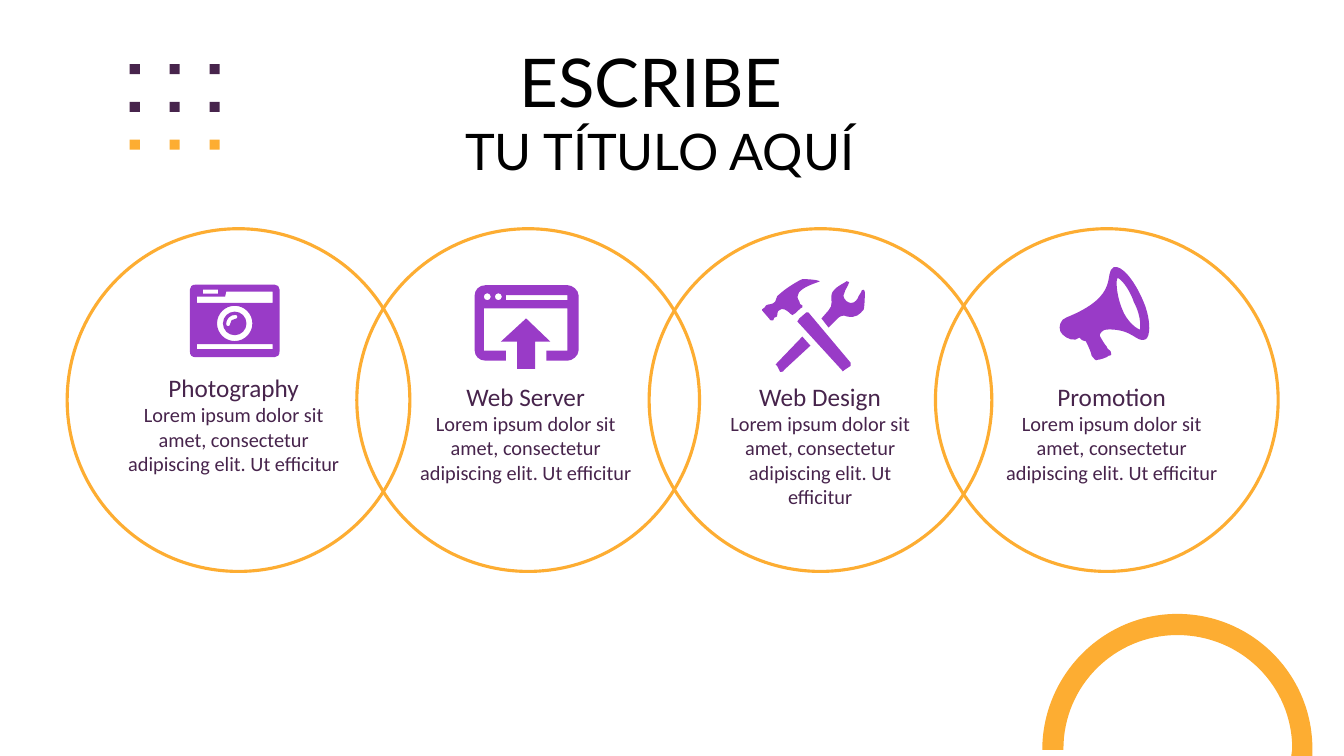
from itertools import chain

from lxml.etree import SubElement
from pptx import Presentation
from pptx.dml.color import RGBColor
from pptx.enum.shapes import MSO_SHAPE as Shape
from pptx.enum.text import MSO_AUTO_SIZE as AutoSize, PP_ALIGN as Align
from pptx.oxml import parse_xml
from pptx.oxml.ns import nsdecls, qn
from pptx.util import Pt

ORANGE, PLUM, PURPLE, BLACK = "FDAD32", "47244C", "993BC7", "000000"
GRID_UNIT = 0.72
CIRCLE_SIZE = 244.8
CIRCLE_TOP = 163.4
BODY = "Lorem ipsum dolor sit amet, consectetur adipiscing elit. Ut efficitur"


def color(hex_code):
    return RGBColor.from_string(hex_code)


def paint(shape, fill=None, line=None, line_width=2.25):
    shape.shadow.inherit = False
    if fill:
        shape.fill.solid()
        shape.fill.fore_color.rgb = color(fill)
    else:
        shape.fill.background()
    if line:
        shape.line.color.rgb = color(line)
        shape.line.width = Pt(line_width)
    else:
        shape.line.fill.background()


def circle(x, y, radius):
    k = radius * 0.55
    east, south, west, north = x + radius, y + radius, x - radius, y - radius
    return [(east, y), (east, y + k, x + k, south, x, south),
            (x - k, south, west, y + k, west, y),
            (west, y - k, x - k, north, x, north),
            (x + k, north, east, y - k, east, y)]


def rectangle(left, top, right, bottom):
    return [(left, top), (right, top), (right, bottom), (left, bottom)]


def add_outline(page, left, top, contours, fill):
    def place(x, y):
        return Pt(left + x * GRID_UNIT), Pt(top + y * GRID_UNIT)

    builder = None
    for contour in contours:
        points = [place(*segment[-2:]) for segment in contour]
        if builder is None:
            builder = page.shapes.build_freeform(*points[0])
        else:
            builder.move_to(*points[0])
        builder.add_line_segments(points[1:], close=True)
    shape = builder.convert_to_shape()
    paint(shape, fill)
    segments = chain.from_iterable(contour[1:] for contour in contours)
    straights = list(shape.element.iter(qn("a:lnTo")))
    for straight, segment in zip(straights, segments):
        if len(segment) == 2:
            continue
        curve = parse_xml(f"<a:cubicBezTo {nsdecls('a')}/>")
        for index in (0, 2, 4):
            x, y = place(*segment[index:index + 2])
            SubElement(curve, qn("a:pt"), x=str(x - shape.left), y=str(y - shape.top))
        straight.getparent().replace(straight, curve)


def add_text(page, box, lines, font, hex_code, insets=None):
    frame = page.shapes.add_textbox(*map(Pt, box)).text_frame
    frame.word_wrap = True
    frame.auto_size = AutoSize.SHAPE_TO_FIT_TEXT
    if insets:
        frame.margin_left = frame.margin_right = Pt(insets[0])
        frame.margin_top = frame.margin_bottom = Pt(insets[1])
    for index, (text, size) in enumerate(lines):
        para = frame.add_paragraph() if index else frame.paragraphs[0]
        para.alignment = Align.CENTER
        span = para.add_run()
        span.text = text
        span.font.name = font
        span.font.size = Pt(size)
        span.font.color.rgb = color(hex_code)


CAMERA = [
    [(84, 0), (87, 0, 89, 2, 89, 5), (89, 66), (89, 70, 87, 72, 84, 72),
     (6, 72), (2, 72, 0, 70, 0, 66), (0, 5), (0, 2, 2, 0, 6, 0)],
    [(82, 7), (36, 7), (35, 12), (7, 12), (7, 18), (82, 18)],
    rectangle(7, 59, 82, 64),
    rectangle(13, 5, 28, 9),
    circle(44.5, 38.5, 17.5),
    circle(44.5, 38.5, 11.7),
    [(40, 39), (40, 36, 42, 34, 45, 34), (48, 34, 48, 30, 45, 30),
     (40, 30, 36, 34, 36, 39), (36, 42, 40, 42, 40, 39)],
]
BROWSER = [
    [(92, 0), (11, 0), (4, 0, 0, 5, 0, 10), (0, 65), (0, 70, 4, 75, 11, 75),
     (31, 75), (31, 65), (9, 65), (9, 23), (92, 23), (92, 65), (71, 65), (71, 75),
     (92, 75), (97, 75, 103, 70, 103, 65), (103, 10), (103, 5, 97, 0, 92, 0)],
    circle(12.5, 11.5, 3.5),
    circle(23.5, 11.5, 3.5),
    rectangle(31, 10, 92, 15),
    [(51, 33), (26, 56), (42, 56), (42, 83), (60, 83), (60, 56), (75, 56)],
]
TOOLS = [
    [(17, 31), (20, 28, 24, 30, 29, 35), (31, 37, 31, 35, 31, 35),
     (33, 35, 38, 28, 40, 28), (40, 26), (38, 26, 37, 24, 37, 22),
     (27, 9, 62, 2, 57, 2), (53, 0, 42, 0, 40, 0), (35, 2, 26, 8, 22, 11),
     (17, 15, 15, 17, 15, 17), (13, 19, 15, 22, 11, 24), (7, 26, 6, 24, 4, 26),
     (4, 28, 2, 28, 0, 30), (0, 31), (7, 39), (7, 41, 9, 41, 11, 41),
     (11, 39, 13, 37, 15, 37), (15, 37, 15, 31, 17, 31)],
    [(46, 33), (44, 33), (37, 39), (35, 42), (79, 90), (79, 92, 81, 92, 82, 90),
     (88, 86), (88, 83)],
    [(102, 13), (101, 9, 101, 11, 99, 11), (99, 13, 95, 17, 95, 19),
     (93, 22, 90, 26, 84, 22), (79, 17, 81, 15, 82, 13), (82, 11, 86, 6, 86, 4),
     (88, 4, 86, 2, 84, 2), (82, 4, 71, 8, 69, 15), (68, 20, 71, 26, 66, 31),
     (59, 39), (66, 48), (75, 39), (77, 37, 81, 35, 84, 37),
     (93, 39, 97, 35, 101, 30), (102, 24, 102, 15, 102, 13)],
    [(15, 83), (13, 84, 13, 86, 15, 86), (18, 92), (20, 92, 22, 92, 22, 90),
     (48, 66), (40, 57)],
]
MEGAPHONE = [
    [(83, 33), (75, 15, 63, 0, 55, 2), (44, 8, 63, 30, 8, 52), (2, 54, 0, 61, 2, 66),
     (4, 70, 11, 75, 17, 74), (21, 72), (24, 77, 28, 74, 28, 77),
     (30, 81, 33, 88, 33, 90), (35, 92, 37, 96, 39, 94), (41, 94, 48, 92, 50, 90),
     (53, 90, 53, 88, 52, 86), (52, 85, 48, 83, 48, 81), (46, 79, 42, 72, 41, 70),
     (41, 68, 44, 64, 48, 64), (74, 63, 77, 77, 86, 74), (92, 72, 92, 52, 83, 33)],
    [(81, 64), (79, 64, 68, 57, 63, 43), (57, 28, 57, 13, 59, 13),
     (61, 13, 70, 22, 75, 37), (83, 52, 81, 63, 81, 64)],
]
ARCH = [
    [(0, 135), (0, 61, 60, 0, 134, 0), (208, 0, 268, 60, 268, 134), (268, 141),
     (247, 141), (248, 134), (248, 71, 197, 21, 134, 21),
     (72, 21, 21, 71, 21, 134), (21, 135)],
]
SERVICES = [
    (48, "Photography", (30, 97.6, 177.8, 84.2), CAMERA, (87.6, 39.9)),
    (254.9, "Web Server", (31.7, 103.7, 177.8, 84.2), BROWSER, (84.2, 40.3)),
    (463.7, "Web Design", (39.3, 103.7, 165.6, 101.5), TOOLS, (80.6, 36)),
    (668.2, "Promotion", (37, 103.7, 177.8, 84.2), MEGAPHONE, (87.8, 25.9)),
]


def add_service(page, left, top, heading, text_box, icon, icon_offset):
    ring = page.shapes.add_shape(Shape.OVAL, Pt(left), Pt(top),
                                 Pt(CIRCLE_SIZE), Pt(CIRCLE_SIZE))
    paint(ring, line=ORANGE)
    x, y, width, height = text_box
    add_text(page, (left + x, top + y, width, height),
             [(heading, 18), (BODY, 14.5)], "Calibri", PLUM, (9.4, 5))
    add_outline(page, left + icon_offset[0], top + icon_offset[1], icon, PURPLE)


def add_title(page, left, top):
    add_text(page, (left + 116.8, top, 380.2, 65.5), [("ESCRIBE ", 48)], "Lato", BLACK)
    add_text(page, (left, top + 56.9, 614.2, 51.1), [("TU TÍTULO AQUÍ", 36)],
             "Lato", BLACK)


def add_squares(page, left, top, size=7.2, column_step=28.5, row_step=27):
    group = page.shapes.add_group_shape()
    for row, fill in enumerate((PLUM, PLUM, ORANGE)):
        for column in range(3):
            square = group.shapes.add_shape(
                Shape.RECTANGLE, Pt(left + column * column_step),
                Pt(top + row * row_step), Pt(size), Pt(size))
            paint(square, fill)


def main():
    deck = Presentation()
    deck.slide_width, deck.slide_height = Pt(960), Pt(540)
    page = deck.slides.add_slide(deck.slide_layouts[6])
    for left, heading, text_box, icon, icon_offset in SERVICES:
        add_service(page, left, CIRCLE_TOP, heading, text_box, icon, icon_offset)
    add_title(page, 164.2, 25.2)
    add_outline(page, 744.5, 438.5, ARCH, ORANGE)
    add_squares(page, 92.7, 45.8)
    deck.save("out.pptx")


if __name__ == "__main__":
    main()
